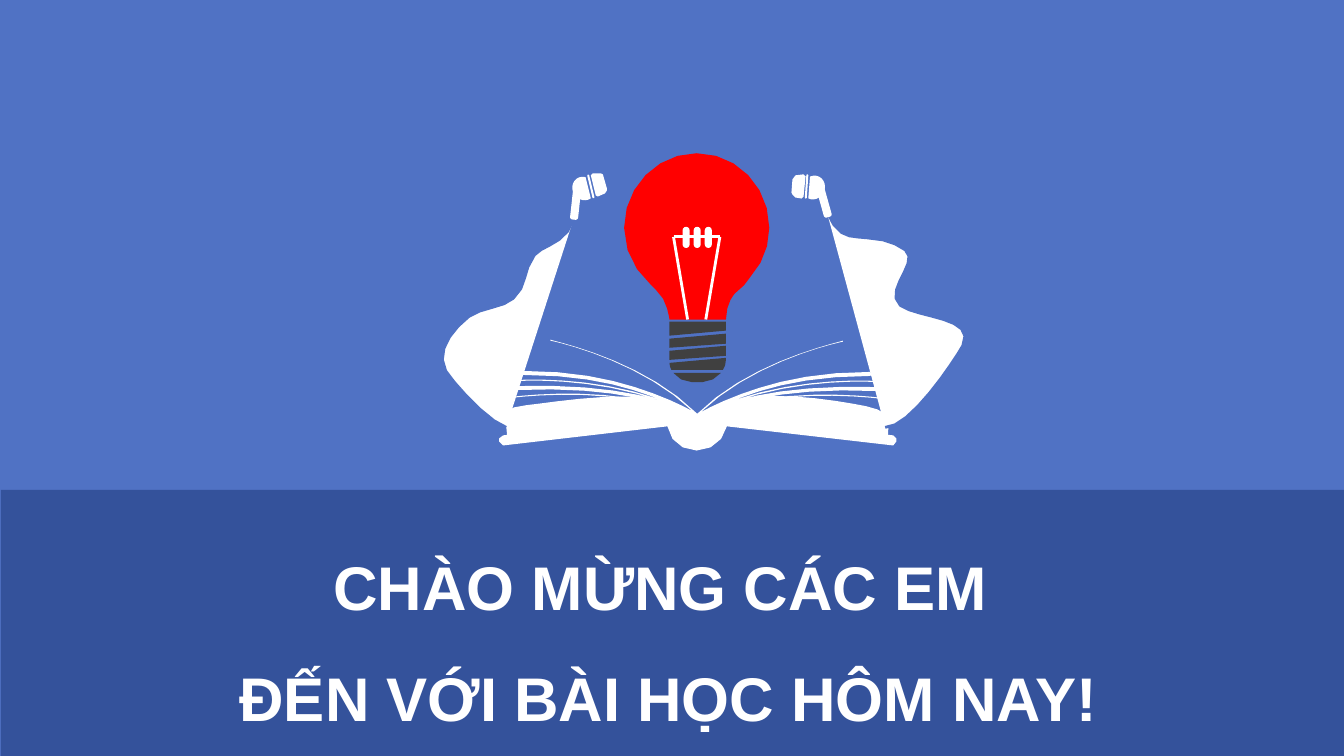
from math import ceil, dist, sqrt

from lxml.etree import SubElement
from pptx import Presentation
from pptx.dml.color import RGBColor
from pptx.enum.shapes import MSO_CONNECTOR, MSO_SHAPE
from pptx.enum.text import MSO_ANCHOR, PP_ALIGN
from pptx.oxml.ns import qn
from pptx.util import Inches, Pt

COLORS = {"sky": "5072C4", "band": "34529B", "glass": "FF0000", "socket": "404040", "white": "FFFFFF"}
GREETING = ["CHÀO MỪNG CÁC EM ", "ĐẾN VỚI BÀI HỌC HÔM NAY!"]

GLASS = """M 6.91 1.52 C 7.31 1.52 7.63 1.85 7.63 2.26 C 7.63 2.45 7.56 2.62 7.44 2.75
C 7.41 2.8 7.36 2.86 7.29 2.91 C 7.29 2.91 7.2 3 7.2 3.17 L 6.64 3.17 C 6.64 3.17 6.62 2.97 6.51 2.88
L 6.46 2.83 C 6.3 2.69 6.19 2.49 6.19 2.26 C 6.19 1.85 6.52 1.52 6.91 1.52"""
SOCKET = """M 7.2 3.55 L 7.2 3.57 C 7.2 3.61 7.19 3.64 7.17 3.67 L 6.66 3.67 C 6.65 3.65 6.64 3.63 6.64 3.6
M 7.2 3.43 L 7.2 3.53 L 6.64 3.57 L 6.64 3.48 M 7.2 3.31 L 7.2 3.41 L 6.64 3.45 L 6.64 3.36
M 6.64 3.19 L 7.2 3.19 L 7.2 3.28 L 6.64 3.33"""
CAP = "M 6.68 3.7 L 7.15 3.7 C 7.11 3.75 7.04 3.79 6.97 3.79 L 6.86 3.79 C 6.78 3.79 6.72 3.75 6.68 3.7"
FILAMENT = [(6.68, 2.35, 6.82, 3.17), (7.14, 2.35, 7, 3.17), (6.68, 2.35, 7.14, 2.35)]
COIL_COUNT, COIL_LEFT, COIL_STEP = 3, 6.77, 0.11

COVER = """M 8.59 4.03 C 8.29 3.97 7.19 3.77 6.92 4.18 C 6.66 3.77 5.54 3.99 5.22 4.02
C 4.91 4.05 5.04 4.16 5.03 4.37 L 6.67 4.22 C 6.67 4.32 6.78 4.39 6.92 4.4
C 7.05 4.4 7.17 4.32 7.17 4.22 L 8.81 4.38 C 8.8 4.17 8.87 4.09 8.59 4.03"""
SPINE = """M 6.91 4.47 C 6.76 4.47 6.64 4.37 6.62 4.23 L 4.99 4.42 L 4.95 4.38 L 4.95 4.35 L 4.99 4.32
L 6.66 4.13 L 6.72 4.18 C 6.72 4.29 6.8 4.37 6.91 4.37 C 7.02 4.37 7.11 4.29 7.11 4.18 L 7.16 4.13
L 8.86 4.32 L 8.89 4.35 L 8.89 4.38 L 8.86 4.42 L 7.21 4.23 C 7.18 4.37 7.06 4.47 6.91 4.47"""
LEAVES = """M 6.94 4.15 L 6.94 4.12 L 6.91 4.1 C 6.37 3.56 5.47 3.38 5.46 3.37 L 5.46 3.38
C 5.47 3.38 6.33 3.56 6.87 4.08 C 6.8 4.04 6.66 3.97 6.47 3.9 C 6.2 3.8 5.8 3.68 5.19 3.68
L 5.17 3.7 L 5.19 3.72 C 5.8 3.72 6.19 3.83 6.46 3.93 L 6.54 3.96
C 5.85 3.72 5.13 3.77 5.13 3.77 L 5.13 3.78 C 5.14 3.78 5.88 3.73 6.58 3.99 L 6.5 3.96
C 6.22 3.88 5.76 3.81 5.1 3.83 L 5.08 3.85 L 5.1 3.87 C 5.76 3.84 6.21 3.91 6.48 3.99 L 6.5 4
C 5.82 3.83 5.06 3.94 5.05 3.94 L 5.05 3.95 C 5.06 3.95 5.9 3.83 6.59 4.04 L 6.6 4.03 L 6.92 4.18"""
LEFT_WING = """M 5.02 4.24 C 4.84 4.18 4.52 3.83 4.42 3.68 C 4.32 3.5 4.46 3.29 4.65 3.14
C 4.77 3.05 5 3.05 5.09 2.96 C 5.23 2.84 5.18 2.69 5.3 2.53 C 5.38 2.43 5.62 2.42 5.69 2.17"""
RIGHT_WING = """M 8.78 4.24 C 9.02 4.25 9.46 3.59 9.55 3.43 C 9.69 3.14 9.11 3.16 8.93 3.03
C 8.76 2.88 9.13 2.6 8.98 2.48 C 8.88 2.41 8.78 2.37 8.6 2.36 C 8.44 2.34 8.32 2.38 8.2 2.1"""
RIGHT_TIP = """M 7.85 1.91 L 7.86 1.78 L 7.89 1.74 L 7.97 1.73 L 7.99 1.75 L 7.97 1.95 L 7.95 1.97
L 7.89 1.96 L 7.86 1.93"""
LEFT_TIP = """M 6.02 1.87 L 5.98 1.73 L 5.96 1.72 L 5.88 1.72 L 5.86 1.74 L 5.91 1.94 L 5.93 1.95
L 6 1.92 L 6.02 1.89"""
EARBUDS = [
    {"head": (7.96, 1.74, 206.5), "stem": (8.13, 1.82, 344.4), "ring": (7.99, 1.73, 3.9),
     "tip": RIGHT_TIP, "flip": False},
    {"head": (5.68, 1.75, 144), "stem": (5.67, 1.84, 6.2), "ring": (5.85, 1.73, 346.6),
     "tip": LEFT_TIP, "flip": True},
]
BOOK_AXIS, TOLERANCE = 6.91, 0.01


def color(name):
    return RGBColor.from_string(COLORS[name])


def paint(shape, fill, line=None):
    shape.shadow.inherit = False
    shape.fill.solid()
    shape.fill.fore_color.rgb = color(fill)
    if line:
        shape.line.color.rgb = color(line)
        shape.line.width = Pt(2)
    else:
        shape.line.fill.background()
    return shape


def preset(shapes, kind, left, top, width, height, fill, turn=0, round_by=None):
    shape = shapes.add_shape(kind, *map(Inches, (left, top, width, height)))
    shape.rotation = turn
    if round_by is not None:
        shape.adjustments[0] = round_by
    return paint(shape, fill)


def bezier(points, t):
    weights = ((1 - t) ** 3, 3 * t * (1 - t) ** 2, 3 * t * t * (1 - t), t ** 3)
    return tuple(sum(w * p[axis] for w, p in zip(weights, points)) for axis in (0, 1))


def flatten(control):
    bends = [dist((a[0] + c[0], a[1] + c[1]), (2 * b[0], 2 * b[1]))
             for a, b, c in zip(control, control[1:], control[2:])]
    steps = max(1, ceil(sqrt(0.75 * max(bends) / TOLERANCE)))
    return [bezier(control, step / steps) for step in range(1, steps + 1)]


def contours(outline):
    result, tokens = [], iter(outline.split())
    for command in tokens:
        count = 3 if command == "C" else 1
        points = [(float(next(tokens)), float(next(tokens))) for _ in range(count)]
        if command == "M":
            result.append(points)
        elif command == "L":
            result[-1] += points
        else:
            result[-1] += flatten([result[-1][-1]] + points)
    return result


def draw(shapes, outline, fill, line=None, mirrored=False):
    builder = None
    for contour in contours(outline):
        if mirrored:
            contour = [(2 * BOOK_AXIS - x, y + 0.01) for x, y in contour]
        points = [(Inches(x), Inches(y)) for x, y in contour]
        if builder is None:
            builder = shapes.build_freeform(*points[0])
        else:
            builder.move_to(*points[0])
        builder.add_line_segments(points[1:], close=line is None)
    return paint(builder.convert_to_shape(), fill, line)


deck = Presentation()
deck.slide_width, deck.slide_height = Inches(13.33), Inches(7.5)
page = deck.slides.add_slide(deck.slide_layouts[5])
page.background.fill.solid()
page.background.fill.fore_color.rgb = color("sky")

band = preset(page.shapes, MSO_SHAPE.RECTANGLE, 0.01, 4.86, 13.33, 2.64, "band")
title = page.shapes.title
title._element.addprevious(band._element)
title.left, title.top, title.width, title.height = map(Inches, (-0.03, 5.02, 13.33, 2.32))
frame = title.text_frame
frame.word_wrap = True
frame.vertical_anchor = MSO_ANCHOR.MIDDLE
frame.text = "\n".join(GREETING)
for para in frame.paragraphs:
    para.alignment = PP_ALIGN.CENTER
    para.line_spacing = 1.5
    para.font.name, para.font.size, para.font.bold = "Arial", Pt(44), True
    para.font.color.rgb = color("white")

bulb = page.shapes.add_group_shape().shapes
draw(bulb, GLASS, "glass")
draw(bulb, SOCKET, "socket")
draw(bulb, CAP, "socket")
for ends in FILAMENT:
    wire = bulb.add_connector(MSO_CONNECTOR.STRAIGHT, *map(Inches, ends))
    wire.line.color.rgb = color("white")
    wire.line.width = Pt(2)
    SubElement(wire._element.spPr, qn("a:effectLst"))
for index in range(COIL_COUNT):
    preset(bulb, MSO_SHAPE.ROUNDED_RECTANGLE, COIL_LEFT + index * COIL_STEP, 2.25, 0.07, 0.21,
           "white", round_by=0.5)

book = page.shapes.add_group_shape().shapes
for outline in (COVER, SPINE, LEAVES):
    draw(book, outline, "white")
draw(book, LEAVES, "white", mirrored=True)
for wing in (LEFT_WING, RIGHT_WING):
    draw(book, wing, "white", "sky")
for bud in EARBUDS:
    left, top, turn = bud["head"]
    head = preset(book, MSO_SHAPE.CHORD, left, top, 0.22, 0.24, "white", turn)
    if bud["flip"]:
        head._element.spPr.xfrm.set("flipH", "1")
    for part, width, height, round_by in (("stem", 0.08, 0.34, 0.3), ("ring", 0.02, 0.24, 0.5)):
        left, top, turn = bud[part]
        preset(book, MSO_SHAPE.ROUNDED_RECTANGLE, left, top, width, height, "white", turn, round_by)
    draw(book, bud["tip"], "white")

deck.save("out.pptx")
